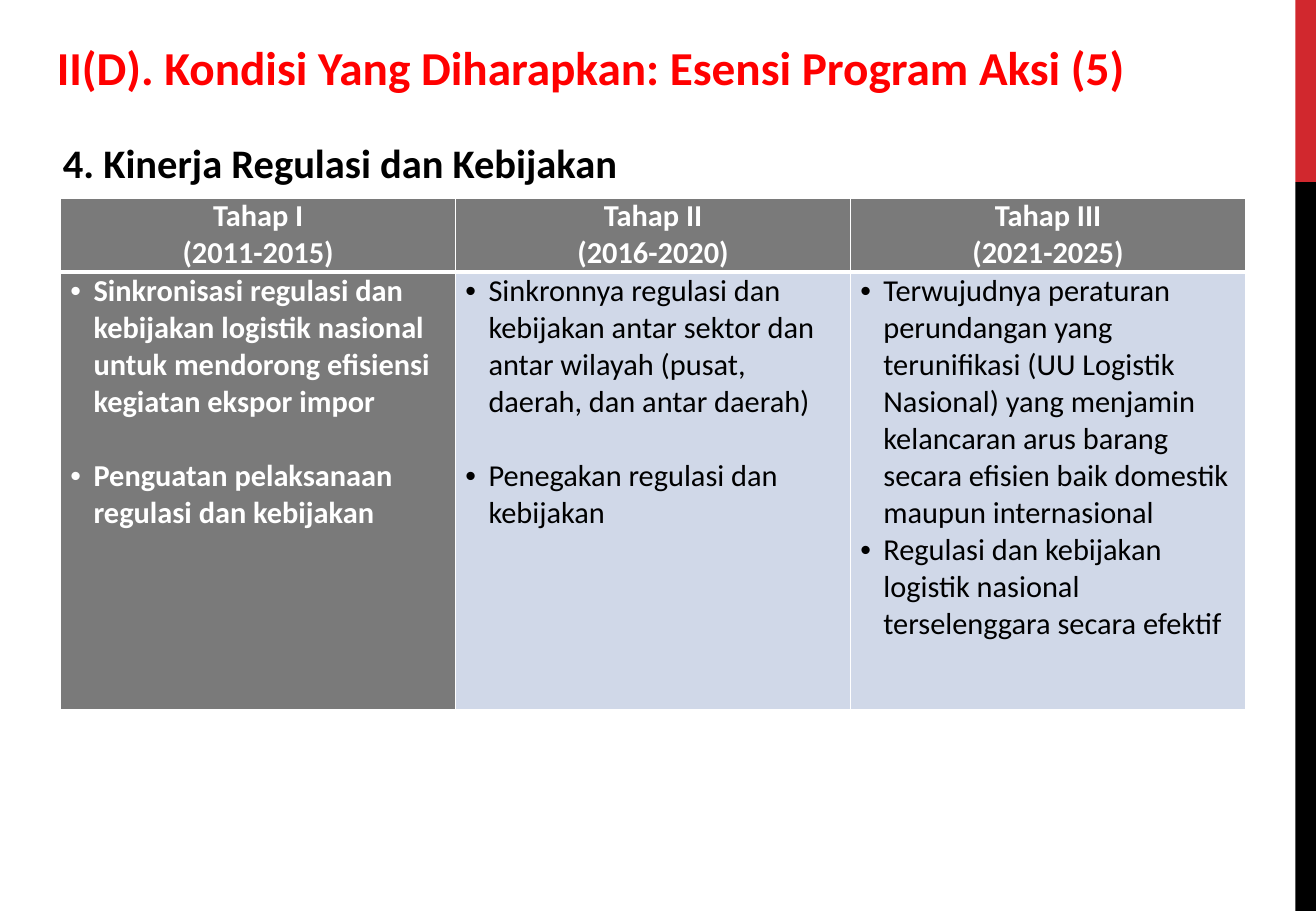
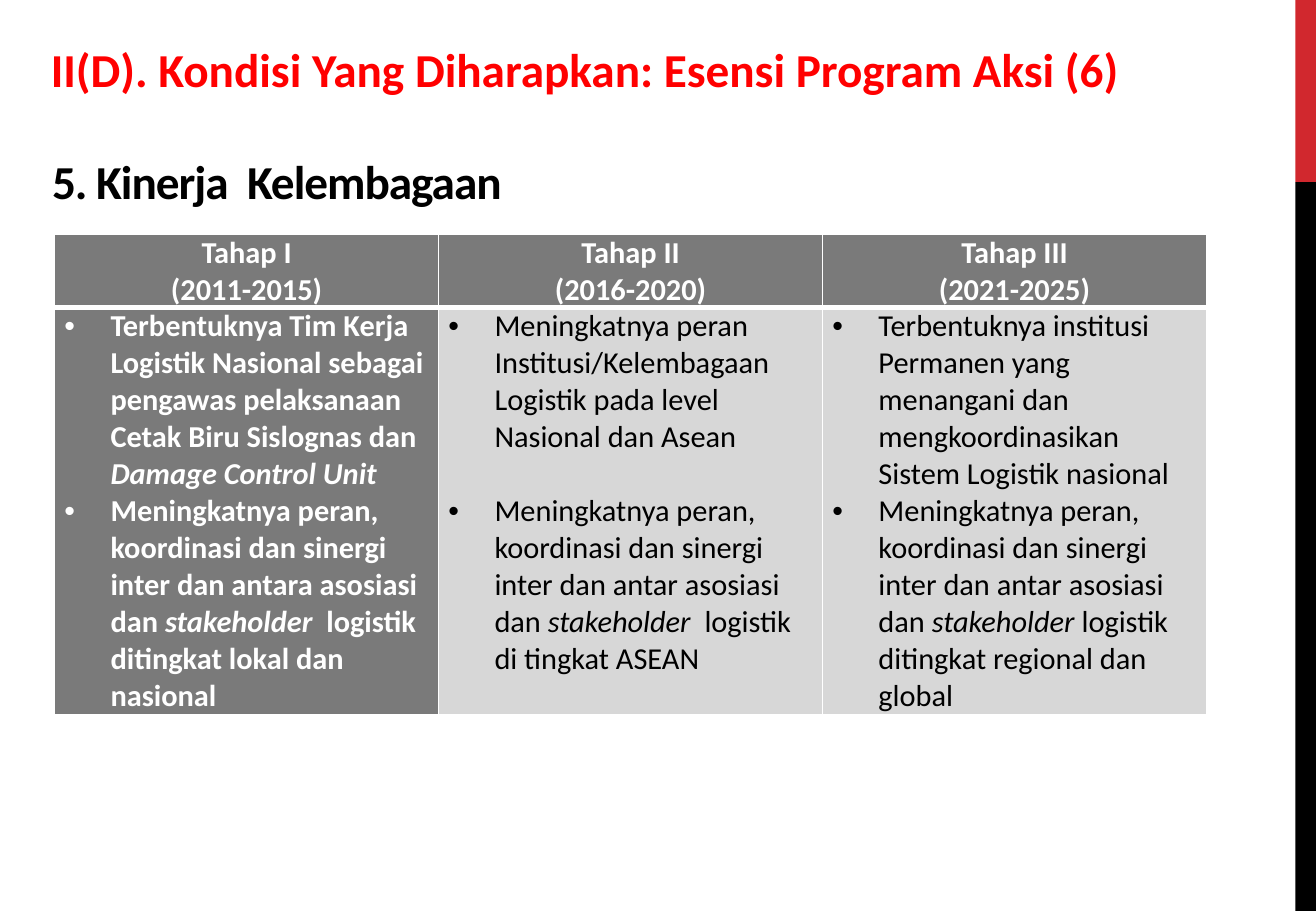
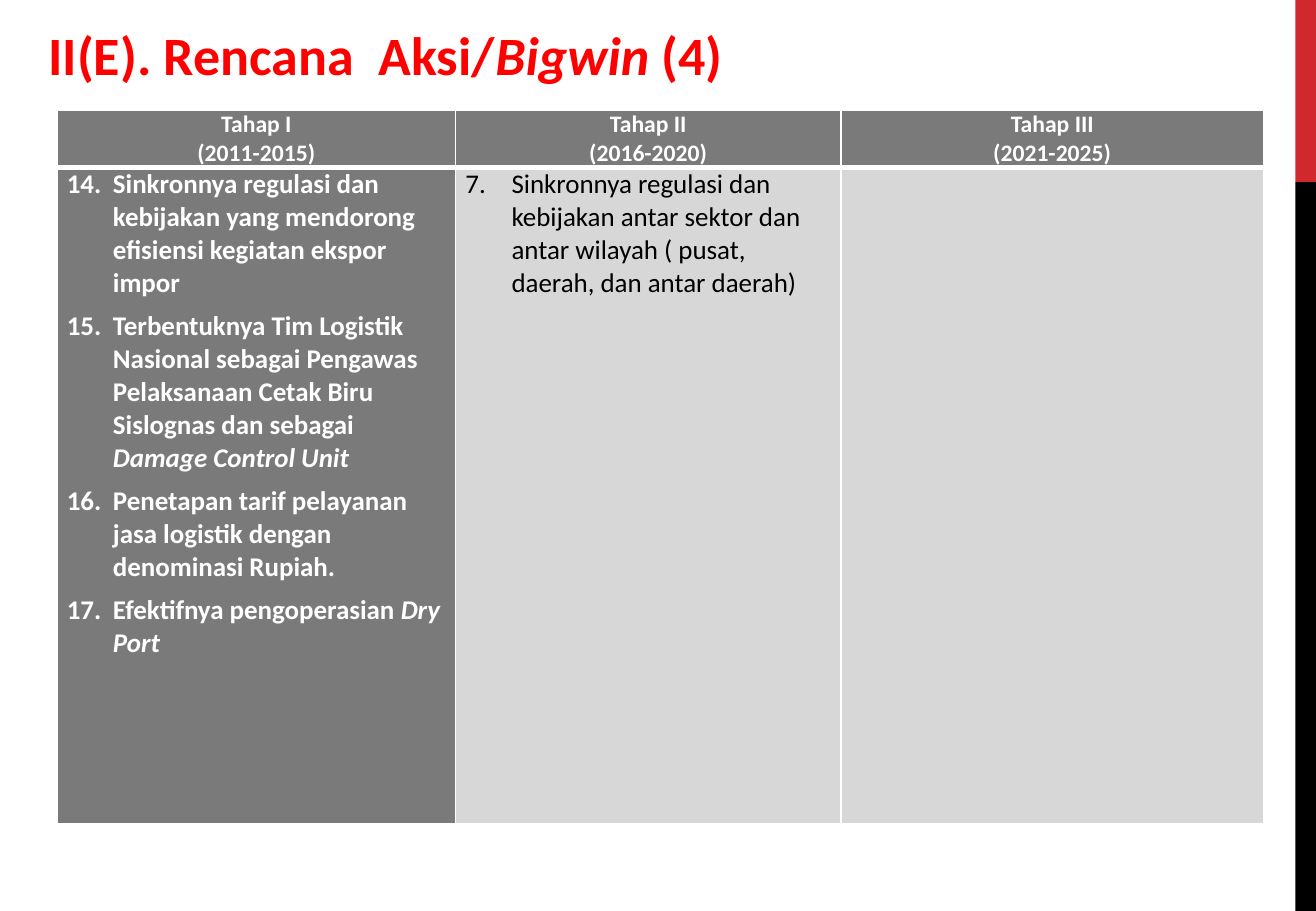
from lxml.etree import SubElement
from pptx import Presentation
from pptx.dml.color import RGBColor
from pptx.enum.shapes import MSO_SHAPE as Shape
from pptx.enum.text import MSO_ANCHOR as Anchor, PP_ALIGN as Align
from pptx.oxml.ns import qn
from pptx.util import Inches, Pt

RED = RGBColor(0xFF, 0x00, 0x00)
CRIMSON = RGBColor(0xD1, 0x28, 0x2E)
BLACK = RGBColor(0x00, 0x00, 0x00)
WHITE = RGBColor(0xFF, 0xFF, 0xFF)
GRAY = RGBColor(0x7A, 0x7A, 0x7A)
PALE_BLUE = RGBColor(0xD0, 0xD8, 0xE8)
PALE_GRAY = RGBColor(0xD7, 0xD7, 0xD7)

STAGES = [
    ("Tahap I", "(2011-2015)"),
    ("Tahap II", "(2016-2020)"),
    ("Tahap III", "(2021-2025)"),
]
LINE_GAP = 22


class Deck:
    font = "Calibri"
    width, height = 10.83, 7.5

    def __init__(self):
        self.prs = Presentation()
        self.prs.slide_width = Inches(self.width)
        self.prs.slide_height = Inches(self.height)
        self.slide = None

    def new_slide(self):
        self.slide = self.prs.slides.add_slide(self.prs.slide_layouts[6])
        self.band(0, 1.5, CRIMSON)
        self.band(1.5, 6, BLACK)

    def band(self, top, height, color):
        band = self.slide.shapes.add_shape(
            Shape.RECTANGLE, Inches(10.66), Inches(top), Inches(0.17), Inches(height))
        band.shadow.inherit = False
        band.fill.solid()
        band.fill.fore_color.rgb = color
        band.line.fill.background()

    def add_runs(self, paragraph, parts, size, color, bold=True, spacing=None):
        for index, text in enumerate(parts):
            run = paragraph.add_run()
            run.text = text
            run.font.name = self.font
            run.font.size = Pt(size)
            run.font.bold = bold
            run.font.italic = index % 2 == 1
            run.font.color.rgb = color
            if spacing is not None:
                run.font._element.set("spc", str(spacing))

    def heading(self, box, parts, size=28, color=RED, anchor=Anchor.BOTTOM, spacing=None):
        frame = self.slide.shapes.add_textbox(*map(Inches, box)).text_frame
        frame.word_wrap = True
        frame.vertical_anchor = anchor
        self.add_runs(frame.paragraphs[0], parts, size, color, spacing=spacing)

    def borders(self, cell, top, bottom):
        properties = cell._tc.get_or_add_tcPr()
        for side, points in (("L", 1), ("R", 1), ("T", top), ("B", bottom)):
            edge = SubElement(properties, qn("a:ln" + side), w=str(Pt(points)))
            fill = SubElement(edge, qn("a:solidFill"))
            SubElement(fill, qn("a:srgbClr"), val=str(WHITE))

    def cell(self, cell, color, inset, top, bottom):
        self.borders(cell, top, bottom)
        cell.fill.solid()
        cell.fill.fore_color.rgb = color
        cell.margin_left = cell.margin_right = Inches(inset)
        cell.margin_top = cell.margin_bottom = 0
        return cell.text_frame

    def paragraphs(self, frame, count):
        return [frame.paragraphs[0]] + [frame.add_paragraph() for _ in range(count - 1)]

    def list_mark(self, paragraph, indent, start):
        properties = paragraph._p.get_or_add_pPr()
        properties.set("marL", str(Inches(indent)))
        properties.set("indent", str(-Inches(indent)))
        if start:
            SubElement(properties, qn("a:buAutoNum"), type="arabicPeriod", startAt=str(start))
        else:
            SubElement(properties, qn("a:buFont"), typeface="Arial")
            SubElement(properties, qn("a:buChar"), char="•")

    def stage_table(self, left, top, columns, rows, stages, pale,
                    indent=0.38, head_size=18, size=18):
        table = self.slide.shapes.add_table(
            2, len(columns), Inches(left), Inches(top),
            Inches(sum(columns)), Inches(sum(rows))).table
        table.horz_banding = False
        for row, height in zip(table.rows, rows):
            row.height = Inches(height)
        for index, (width, stage) in enumerate(zip(columns, stages)):
            table.columns[index].width = Inches(width)
            head = self.cell(table.cell(0, index), GRAY, 0.01, 1, 3)
            for paragraph, text in zip(self.paragraphs(head, 2), STAGES[index]):
                paragraph.alignment = Align.CENTER
                self.add_runs(paragraph, [text], head_size, WHITE)
            first = index == 0
            body = self.cell(table.cell(1, index), GRAY if first else pale, 0.08, 3, 1)
            items, gap, start = stage
            for number, (paragraph, parts) in enumerate(
                    zip(self.paragraphs(body, len(items)), items)):
                paragraph.space_before = Pt(gap if number else 0)
                self.list_mark(paragraph, indent, start)
                self.add_runs(paragraph, parts, size, WHITE if first else BLACK, bold=first)


def regulation(deck):
    deck.new_slide()
    deck.stage_table(0.5, 1.63, [3.25] * 3, [0.6, 3.6], [
        ([["Sinkronisasi regulasi dan kebijakan logistik nasional untuk mendorong "
           "efisiensi kegiatan ekspor impor"],
          ["Penguatan pelaksanaan regulasi dan kebijakan"]], LINE_GAP, None),
        ([["Sinkronnya regulasi dan kebijakan antar sektor dan antar wilayah "
           "(pusat, daerah, dan antar daerah)"],
          ["Penegakan regulasi dan kebijakan"]], LINE_GAP, None),
        ([["Terwujudnya peraturan perundangan yang terunifikasi (UU Logistik  Nasional) "
           "yang menjamin kelancaran arus barang secara efisien baik domestik "
           "maupun internasional"],
          ["Regulasi dan kebijakan logistik nasional terselenggara secara efektif"]], 0, None),
    ], PALE_BLUE, indent=0.19)
    deck.heading((0.42, 1.14, 8.53, 0.39), ["4. Kinerja Regulasi dan Kebijakan"],
                 size=24, color=BLACK, anchor=Anchor.MIDDLE)
    deck.heading((0.37, 0.2, 9.96, 0.63),
                 ["II(D). Kondisi Yang Diharapkan: Esensi Program Aksi (5)"])


def institutions(deck):
    deck.new_slide()
    deck.heading((0.33, 1, 10.08, 0.77), ["5. Kinerja  Kelembagaan"],
                 color=BLACK, spacing=-60)
    role = "Meningkatnya peran, koordinasi dan sinergi inter dan {} asosiasi dan "
    deck.stage_table(0.45, 1.93, [3.16] * 3, [0.6, 3.35], [
        ([["Terbentuknya Tim Kerja Logistik Nasional sebagai pengawas pelaksanaan "
           "Cetak Biru Sislognas dan ", "Damage Control Unit"],
          [role.format("antara"), "stakeholder",
           "  logistik ditingkat lokal dan nasional"]], 0, None),
        ([["Meningkatnya peran Institusi/Kelembagaan Logistik pada level "
           "Nasional dan Asean"],
          [role.format("antar"), "stakeholder  ",
           "logistik di tingkat ASEAN"]], LINE_GAP, None),
        ([["Terbentuknya institusi Permanen yang menangani dan mengkoordinasikan "
           "Sistem Logistik nasional"],
          [role.format("antar"), "stakeholder",
           " logistik ditingkat regional dan global"]], 0, None),
    ], PALE_GRAY)
    deck.heading((0.32, 0.22, 9.96, 0.63),
                 ["II(D). Kondisi Yang Diharapkan: Esensi Program Aksi (6)"])


def action_plan(deck):
    deck.new_slide()
    deck.stage_table(0.47, 0.91, [3.28, 3.17, 3.48], [0.47, 5.4], [
        ([["Sinkronnya regulasi dan kebijakan yang mendorong efisiensi kegiatan ekspor impor"],
          ["Terbentuknya Tim Logistik Nasional sebagai Pengawas Pelaksanaan "
           "Cetak Biru Sislognas dan sebagai ", "Damage Control Unit"],
          ["Penetapan tarif pelayanan jasa logistik dengan denominasi Rupiah."],
          ["Efektifnya pengoperasian ", "Dry Port"]], 6, 14),
        ([["Sinkronnya regulasi dan kebijakan antar sektor dan antar wilayah "
           "( pusat, daerah, dan antar daerah)"]], 6, 7),
        ([], 0, None),
    ], PALE_GRAY, head_size=14, size=16)
    deck.heading((0.3, 0.13, 10.03, 0.63),
                 ["II(E). Rencana  Aksi/", "Bigwin ", "(4)"], size=32)


def main():
    deck = Deck()
    for build in (regulation, institutions, action_plan):
        build(deck)
    deck.prs.save("out.pptx")


if __name__ == "__main__":
    main()
